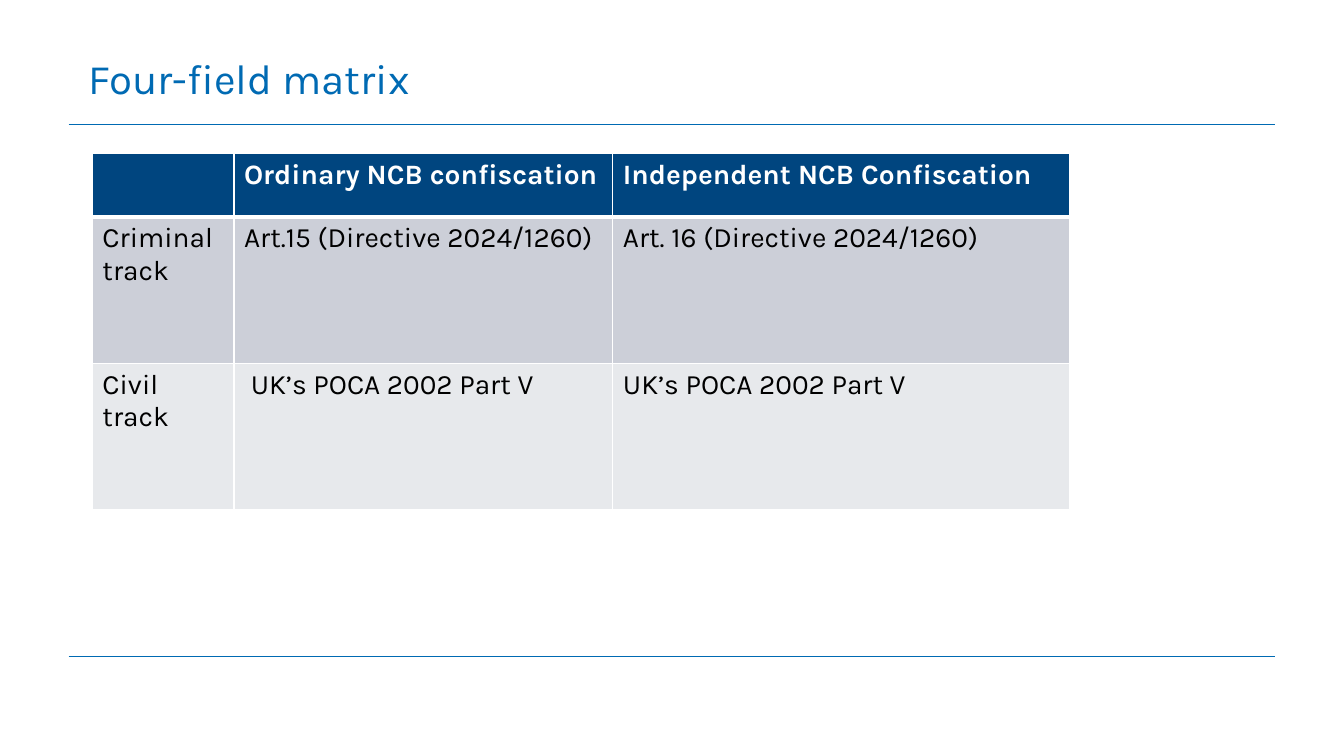
import pptx
import pptx.dml.color
import pptx.enum.text
import pptx.oxml
import pptx.oxml.ns
import pptx.util
from lxml import etree

Pt = pptx.util.Pt
RGBColor = pptx.dml.color.RGBColor

BLUE = RGBColor(0x00, 0x6A, 0xB3)
NAVY = RGBColor(0x00, 0x45, 0x7F)
GREY = RGBColor(0xCC, 0xCF, 0xD8)
PALE = RGBColor(0xE7, 0xE9, 0xEC)
WHITE = RGBColor(0xFF, 0xFF, 0xFF)
BLACK = RGBColor(0x00, 0x00, 0x00)

RULE_LEFT, RULE_WIDTH = 49, 862
HEADER_RULE_TOP, FOOTER_RULE_TOP = 88.6, 468.7

MATRIX = [
    ["", "Ordinary NCB confiscation", "Independent NCB Confiscation"],
    ["Criminal track", "Art.15 (Directive 2024/1260)", "Art. 16 (Directive 2024/1260)"],
    ["Civil track", " UK’s POCA 2002 Part V", "UK’s POCA 2002 Part V"],
]


class SlideBuilder:
    """Holds the style and the current slide; lengths are in points."""

    font_name = "Karla"

    def __init__(self, slide):
        self.slide = slide

    def style_text(self, text_frame, size, color, bold=False):
        for paragraph in text_frame.paragraphs:
            paragraph.alignment = pptx.enum.text.PP_ALIGN.LEFT
            paragraph.font.size = Pt(size)
            for run in paragraph.runs:
                run.font.name = self.font_name
                run.font.size = Pt(size)
                run.font.bold = bold
                run.font.color.rgb = color

    def title(self, text, left, top, width, height):
        shape = self.slide.shapes.title
        shape.left, shape.top = Pt(left), Pt(top)
        shape.width, shape.height = Pt(width), Pt(height)
        text_frame = shape.text_frame
        text_frame.text = text
        text_frame.vertical_anchor = pptx.enum.text.MSO_ANCHOR.TOP
        text_frame.auto_size = pptx.enum.text.MSO_AUTO_SIZE.NONE
        text_frame.paragraphs[0].line_spacing = 0.9
        self.style_text(text_frame, 30, BLUE)

    def rule(self, left, top, width, weight):
        connector = self.slide.shapes.add_connector(
            pptx.enum.shapes.MSO_CONNECTOR.STRAIGHT,
            Pt(left), Pt(top), Pt(left + width), Pt(top))
        connector.line.color.rgb = BLUE
        connector.line.width = Pt(weight)
        etree.SubElement(connector._element.spPr, pptx.oxml.ns.qn("a:effectLst"))

    def cell_borders(self, cell, weights):
        properties = cell._tc.get_or_add_tcPr()
        for side, weight in weights.items():
            properties.append(pptx.oxml.parse_xml(
                f'<a:ln{side} {pptx.oxml.ns.nsdecls("a")} w="{Pt(weight)}">'
                f'<a:solidFill><a:srgbClr val="{WHITE}"/></a:solidFill></a:ln{side}>'))

    def table(self, rows, left, top, column_widths, row_heights, fills):
        table = self.slide.shapes.add_table(
            len(rows), len(column_widths), Pt(left), Pt(top),
            Pt(sum(column_widths)), Pt(sum(row_heights))).table
        for column, width in zip(table.columns, column_widths):
            column.width = Pt(width)
        for row_index, texts in enumerate(rows):
            table.rows[row_index].height = Pt(row_heights[row_index])
            is_header = row_index == 0
            # A heavier line separates the header from the body
            weights = {"L": 1, "R": 1, "T": 3 if row_index == 1 else 1,
                       "B": 3 if is_header else 1}
            for column_index, text in enumerate(texts):
                cell = table.cell(row_index, column_index)
                cell.text_frame.text = text
                self.style_text(cell.text_frame, 20, WHITE if is_header else BLACK, is_header)
                self.cell_borders(cell, weights)
                cell.fill.solid()
                cell.fill.fore_color.rgb = fills[row_index]


def main():
    presentation = pptx.Presentation()
    presentation.slide_width, presentation.slide_height = Pt(960), Pt(540)
    slide = presentation.slides.add_slide(presentation.slide_layouts[5])
    builder = SlideBuilder(slide)

    # Rules above and below the content
    builder.rule(RULE_LEFT, FOOTER_RULE_TOP, RULE_WIDTH, 0.5)
    builder.rule(RULE_LEFT, HEADER_RULE_TOP, RULE_WIDTH, 0.75)

    # Title
    builder.title(" Four-field matrix", RULE_LEFT, 38.2, RULE_WIDTH, 50.4)

    # Matrix
    builder.table(MATRIX, 66, 109.6, [101.2, 270.6, 326.2], [45.4, 104.6, 104.6],
                  [NAVY, GREY, PALE])

    presentation.save("out.pptx")


if __name__ == "__main__":
    main()
